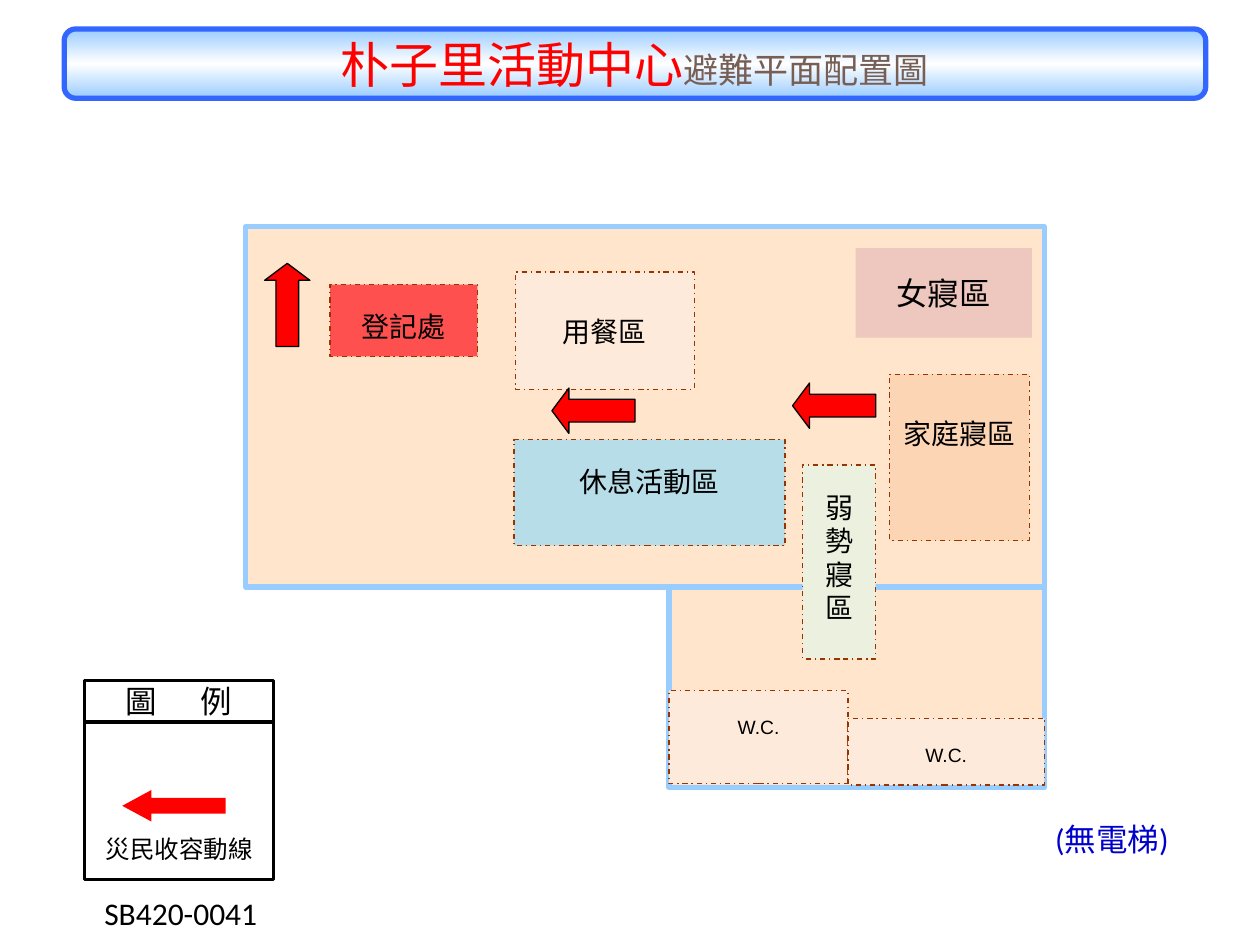
"""Build the shelter floor plan slide of the Puzi village activity centre."""
from copy import deepcopy

from lxml import etree
from pptx import Presentation
from pptx.dml.color import RGBColor
from pptx.enum.dml import MSO_LINE
from pptx.enum.shapes import MSO_SHAPE
from pptx.enum.text import MSO_ANCHOR, PP_ALIGN
from pptx.oxml.ns import qn
from pptx.util import Inches, Pt

RECT, ROUNDED = MSO_SHAPE.RECTANGLE, MSO_SHAPE.ROUNDED_RECTANGLE
DOWN, RIGHT = MSO_SHAPE.DOWN_ARROW, MSO_SHAPE.RIGHT_ARROW
TOP, MIDDLE = MSO_ANCHOR.TOP, MSO_ANCHOR.MIDDLE
LEFT, CENTER = PP_ALIGN.LEFT, PP_ALIGN.CENTER
DASH_DOT = MSO_LINE.DASH_DOT
CJK_FONT = "Noto Sans CJK SC"
BLACK, RED, BROWN = "000000", "FF0000", "993300"
FLOOR, WALL, CREAM = "FFCC99", "99CCFF", "FDEADA"


def rgb(value):
    return RGBColor.from_string(value)


def write(frame, text, size=18, font="Calibri", color=BLACK, align=CENTER,
          anchor=TOP, spacing=None, wrap=True, tab=None):
    frame.word_wrap = wrap
    frame.vertical_anchor = anchor
    paragraph = frame.paragraphs[0]
    paragraph.alignment = align
    if spacing:
        paragraph.line_spacing = spacing
    if tab:
        tabs = etree.SubElement(paragraph._p.get_or_add_pPr(), qn("a:tabLst"))
        etree.SubElement(tabs, qn("a:tab"), pos=str(Inches(tab)), algn="l")
    add_run(paragraph, text, size, font, color)
    return paragraph


def add_run(paragraph, text, size, font, color):
    run = paragraph.add_run()
    run.text = text
    run.font.size = Pt(size)
    run.font.color.rgb = rgb(color)
    run.font.name = font
    latin = run.font._element.find(qn("a:latin"))
    east_asian = etree.Element(qn("a:ea"), typeface=CJK_FONT)
    latin.addnext(east_asian)


class FloorPlan:
    def __init__(self, slide):
        self.slide = slide
        self.canvas = slide.shapes

    def start_group(self):
        self.canvas = self.slide.shapes.add_group_shape().shapes

    def end_group(self):
        self.canvas = self.slide.shapes

    def shape(self, box, fill=None, line=None, width=0.75, kind=RECT,
              opacity=None, dash=None):
        shape = self.canvas.add_shape(kind, *map(Inches, box))
        shape.shadow.inherit = False
        if fill:
            shape.fill.solid()
            shape.fill.fore_color.rgb = rgb(fill)
        else:
            shape.fill.background()
        if opacity:
            tint = shape._element.spPr.find(".//" + qn("a:srgbClr"))
            etree.SubElement(tint, qn("a:alpha"), val=str(opacity * 1000))
        if line:
            shape.line.color.rgb = rgb(line)
            shape.line.width = Pt(width)
            if dash:
                shape.line.dash_style = dash
        else:
            shape.line.fill.background()
        return shape

    def floor(self, box):
        self.shape(box, FLOOR, WALL, 3, opacity=50)

    def area(self, box, label, fill, size=16, spacing=None):
        frame = self.shape(box, fill, BROWN, dash=DASH_DOT).text_frame
        frame.margin_top = Inches(0.2)
        write(frame, label, size=size, font="Arial", spacing=spacing)

    def arrow(self, box, rotation, kind=DOWN, head=0.374, line=BLACK):
        arrow = self.shape(box, RED, line, kind=kind)
        arrow.adjustments[1] = head
        arrow.rotation = rotation

    def label(self, box, text, **style):
        frame = self.canvas.add_textbox(*map(Inches, box)).text_frame
        write(frame, text, **style)

    def title(self, box, place, subject):
        banner = self.shape(box, WALL, "3366FF", 3, ROUNDED)
        banner.fill.gradient()
        stops = banner._element.spPr.find(".//" + qn("a:gsLst"))
        stops.append(deepcopy(stops[0]))
        shades = ((0, WALL), (0.5, "FFFFFF"), (1, WALL))
        for stop, (position, color) in zip(banner.fill.gradient_stops, shades):
            stop.position = position
            stop.color.rgb = rgb(color)
        banner.fill.gradient_angle = 90
        heading = write(banner.text_frame, place, size=28, font=CJK_FONT,
                        color=RED, anchor=MIDDLE)
        add_run(heading, subject, 20, "Arial", "775F55")

    def legend(self):
        self.start_group()
        header = self.shape((0.67, 5.4, 1.5, 0.33), line=BLACK, width=2).text_frame
        header.margin_left = Inches(0.33)
        write(header, "圖\t例", align=LEFT, anchor=MIDDLE, tab=0.59)
        self.shape((0.67, 5.73, 1.5, 1.25), line=BLACK, width=2)
        self.arrow((0.97, 6.27, 0.82, 0.25), 180, RIGHT, 0.924, None)
        self.label((0.74, 6.57, 1.37, 0.33), "災民收容動線", size=14,
                   align=LEFT, wrap=False)
        self.end_group()


def main():
    deck = Presentation()
    deck.slide_width, deck.slide_height = Inches(10), Inches(7.5)
    plan = FloorPlan(deck.slides.add_slide(deck.slide_layouts[6]))

    plan.floor((5.31, 4.66, 2.98, 1.59))
    plan.title((0.51, 0.23, 9.06, 0.55), "朴子里活動中心", "避難平面配置圖")
    plan.floor((1.95, 1.8, 6.34, 2.86))
    plan.legend()
    plan.area((2.62, 2.26, 1.17, 0.57), "登記處", "FF5050")
    plan.label((0.73, 7.05, 2.77, 0.4), "SB420-0041", align=LEFT)
    plan.area((4.08, 3.49, 2.15, 0.84), "休息活動區", "B7DEE8")
    plan.area((7.06, 2.97, 1.11, 1.32), "家庭寢區", "FCD5B5", spacing=1.5)
    plan.area((4.09, 2.16, 1.42, 0.93), "用餐區", CREAM, spacing=1.5)
    plan.label((8.27, 6.46, 1.11, 0.4), "(無電梯)", color="0000CC")
    women = plan.shape((6.79, 1.97, 1.4, 0.71), "E6B9B8", opacity=68)
    write(women.text_frame, "女寢區", anchor=MIDDLE)
    plan.area((6.37, 3.69, 0.58, 1.54), "弱勢寢區", "EBF1DE")
    for toilet in ((5.31, 5.48, 1.42, 0.74), (6.73, 5.7, 1.56, 0.53)):
        plan.area(toilet, "W.C.", CREAM, size=11)
    for left, top, rotation in ((6.44, 2.89, 90), (4.53, 2.93, 90), (2.1, 2.09, 180)):
        plan.arrow((left, top, 0.36, 0.66), rotation)

    deck.save("out.pptx")


if __name__ == "__main__":
    main()
